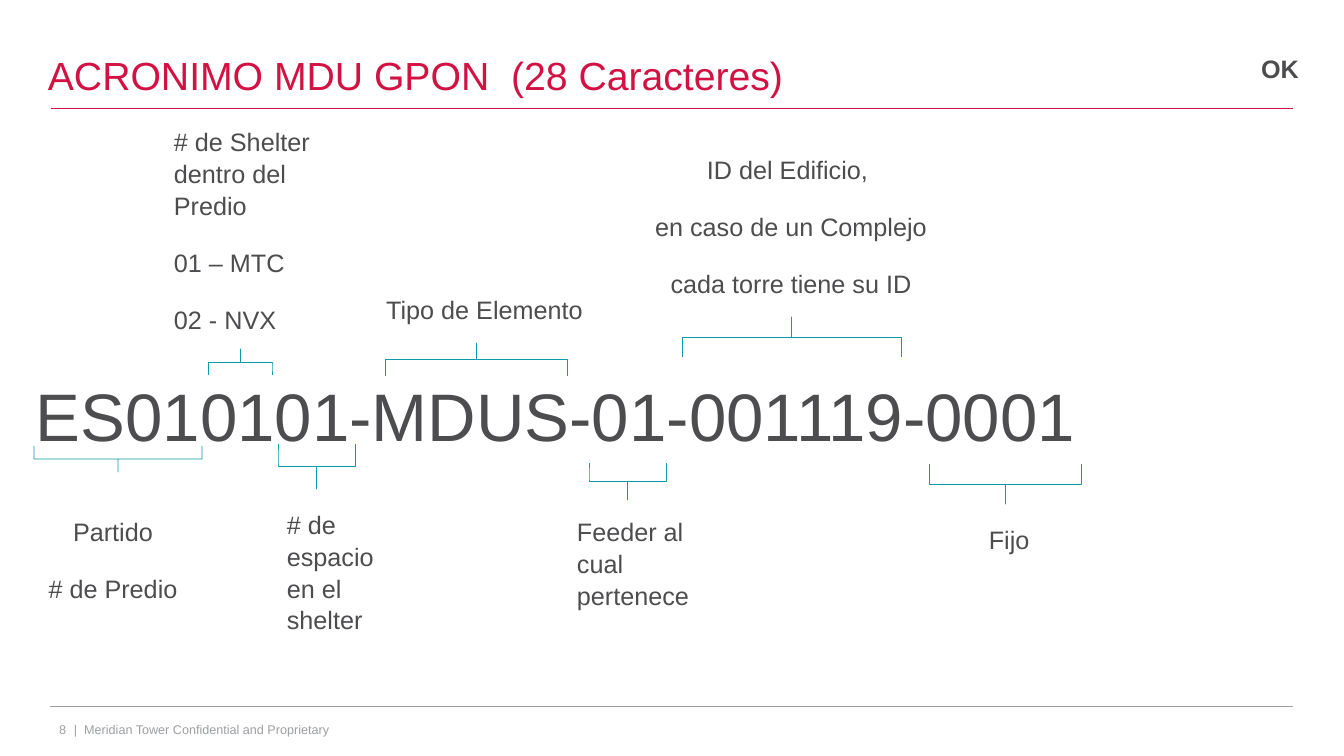
from lxml import etree
from pptx import Presentation
from pptx.dml.color import RGBColor
from pptx.enum.shapes import MSO_CONNECTOR, MSO_SHAPE
from pptx.enum.text import MSO_ANCHOR as Anchor, MSO_AUTO_SIZE as AutoSize, PP_ALIGN as Align
from pptx.oxml.ns import qn
from pptx.util import Emu, Pt

COLORS = {"ink": "4D4D4F", "red": "D11242", "teal": "0C9BA8", "gray": "9D9FA2"}
PAGE_SIZE = (1344, 756)
SCALE = 12192000 / PAGE_SIZE[0]

RULES = [(50, 706, 1293, "gray"), (51, 108, 1293, "red")]

BASE = {"size": 18, "color": "ink", "bold": False, "align": Align.LEFT, "wrap": True,
        "anchor": Anchor.TOP, "fit": AutoSize.SHAPE_TO_FIT_TEXT, "spacing": 1.05, "after": 18}
CENTERED = {"align": Align.CENTER, "wrap": False}
FOOTER = {"size": 9, "color": "gray", "anchor": Anchor.MIDDLE, "fit": AutoSize.NONE,
          "spacing": 1.0, "after": 0}

TEXTS = [
    ((64, 717, 360, 25), ["|  Meridian Tower Confidential and Proprietary"], FOOTER),
    ((36, 719, 40, 20), ["8"], FOOTER | {"align": Align.RIGHT}),
    ((38, 31, 1253, 73), ["ACRONIMO MDU GPON  (28 Caracteres)"],
     {"size": 28, "color": "red", "anchor": Anchor.BOTTOM, "fit": AutoSize.NONE,
      "spacing": 0.9, "after": 0}),
    ((1251, 47, 58, 40), ["OK"], CENTERED | {"bold": True}),
    ((26, 365, 1126, 92), ["ES010101-MDUS-01-001119-0001"], {"size": 48, "after": 0}),
    ((38, 510, 150, 97), ["Partido", "# de Predio"], CENTERED),
    ((164, 120, 161, 214), ["# de Shelter dentro del Predio", "01 – MTC", "02 - NVX"], {}),
    ((277, 503, 117, 132), ["# de espacio en el shelter"], {}),
    ((375, 288, 219, 40), ["Tipo de Elemento"], CENTERED),
    ((567, 510, 148, 102), ["Feeder al cual pertenece"], {}),
    ((644, 148, 294, 152),
     ["ID del Edificio, ", "en caso de un Complejo", "cada torre tiene su ID"], CENTERED),
    ((979, 518, 78, 40), ["Fijo"], {}),
]

DOWN, UP = 90, 270
BRACES = [
    (34, 446, 168, 26, DOWN),
    (208, 349, 64, 26, UP),
    (278, 444, 77, 45, DOWN),
    (385, 343, 182, 33, UP),
    (589, 463, 77, 37, DOWN),
    (682, 317, 219, 40, UP),
    (929, 464, 152, 40, DOWN),
]


def px(*lengths):
    return [Emu(round(length * SCALE)) for length in lengths]


def color(name):
    return RGBColor.from_string(COLORS[name])


def style_line(line, name):
    line.color.rgb = color(name)
    line.width = Pt(0.5)


def add_rule(page, left, top, right, name):
    rule = page.shapes.add_connector(MSO_CONNECTOR.STRAIGHT, *px(left, top, right, top))
    style_line(rule.line, name)
    etree.SubElement(rule._element.spPr, qn("a:effectLst"))


def add_text(page, place, lines, changes):
    look = BASE | changes
    box = page.shapes.add_textbox(*px(*place))
    frame = box.text_frame
    frame.text = "\n".join(lines)
    frame_format = {"word_wrap": look["wrap"], "auto_size": look["fit"],
                    "vertical_anchor": look["anchor"]}
    for name, value in frame_format.items():
        setattr(frame, name, value)
    para_format = {"alignment": look["align"], "line_spacing": look["spacing"],
                   "space_after": Pt(look["after"])}
    font_format = {"name": "Arial", "size": Pt(look["size"]), "bold": look["bold"]}
    for para in frame.paragraphs:
        for name, value in para_format.items():
            setattr(para, name, value)
        for span in para.runs:
            for name, value in font_format.items():
                setattr(span.font, name, value)
            span.font.color.rgb = color(look["color"])


def add_brace(page, left, top, width, height, turn):
    shift = (width - height) / 2
    brace = page.shapes.add_shape(
        MSO_SHAPE.RIGHT_BRACE, *px(left + shift, top - shift, height, width))
    brace.rotation = turn
    brace.adjustments[0] = 0
    brace.adjustments[1] = 0.5
    brace.shadow.inherit = False
    brace.fill.background()
    style_line(brace.line, "teal")


def main():
    deck = Presentation()
    deck.slide_width, deck.slide_height = px(*PAGE_SIZE)
    page = deck.slides.add_slide(deck.slide_layouts[6])
    for rule in RULES:
        add_rule(page, *rule)
    for text in TEXTS:
        add_text(page, *text)
    for brace in BRACES:
        add_brace(page, *brace)
    deck.save("out.pptx")


if __name__ == "__main__":
    main()
